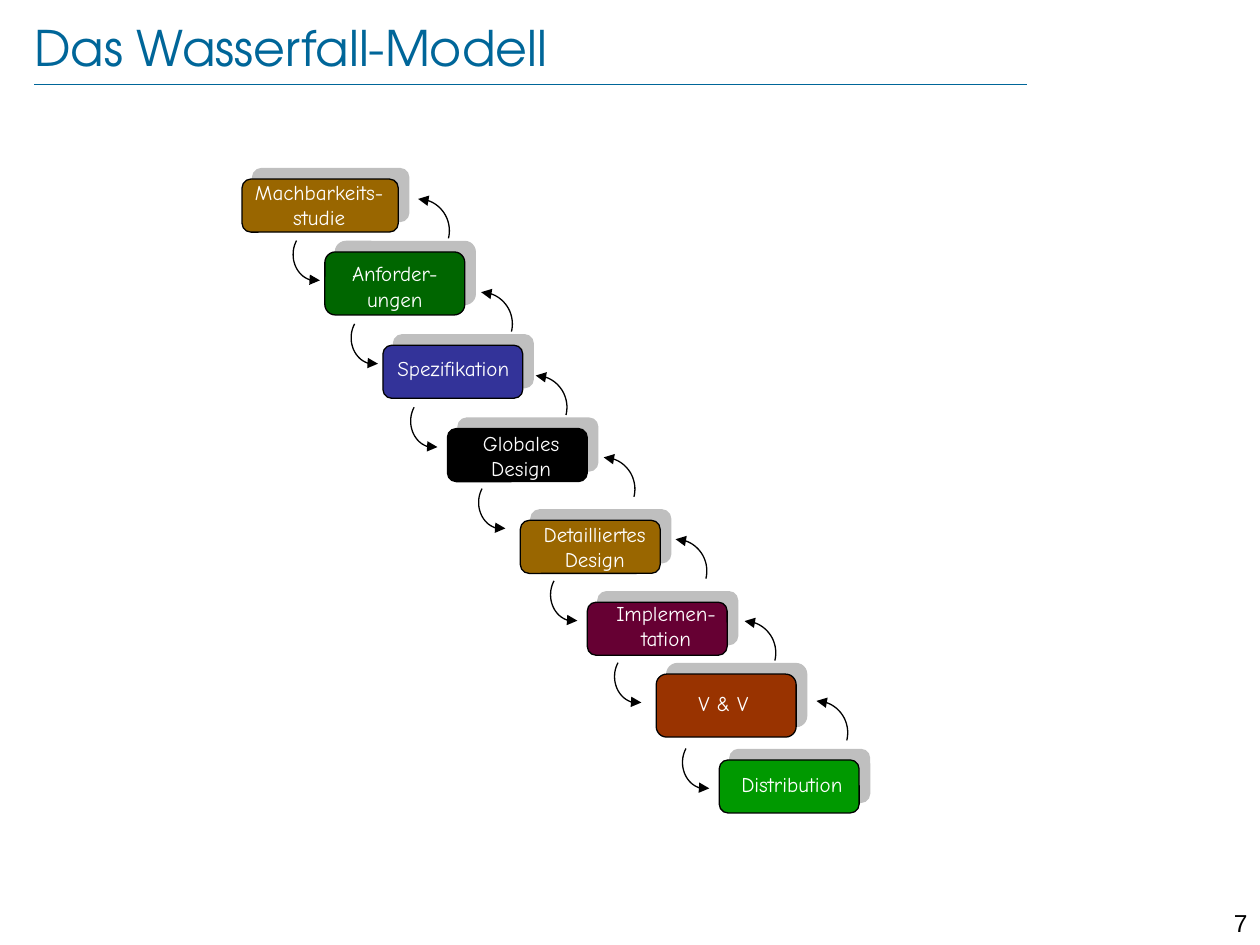
import math
import pptx
import pptx.dml.color
import pptx.enum.shapes
import pptx.enum.text
import pptx.oxml
import pptx.oxml.ns
import pptx.oxml.xmlchemy
import pptx.util

Cm = pptx.util.Cm
Pt = pptx.util.Pt
RGB = pptx.dml.color.RGBColor
ALIGN = pptx.enum.text.PP_ALIGN
ANCHOR = pptx.enum.text.MSO_ANCHOR
FIT = pptx.enum.text.MSO_AUTO_SIZE
SHAPE = pptx.enum.shapes.MSO_SHAPE
qn = pptx.oxml.ns.qn
make = pptx.oxml.xmlchemy.OxmlElement

TEAL = RGB(0x00, 0x66, 0x99)
BLACK = RGB(0x00, 0x00, 0x00)
WHITE = RGB(0xFF, 0xFF, 0xFF)
OCHRE = RGB(0x99, 0x66, 0x00)
GREEN = RGB(0x00, 0x66, 0x00)
BLUE = RGB(0x33, 0x33, 0x99)
PLUM = RGB(0x66, 0x00, 0x33)
RUST = RGB(0x99, 0x33, 0x00)
LIME = RGB(0x00, 0x99, 0x00)

HEAD = {"name": "TeX Gyre Adventor", "size": Pt(28), "color": TEAL}
LABEL = {"name": "Comic Neue", "size": Pt(12), "color": WHITE}
PAGE = {"name": "Arial", "size": Pt(14), "color": BLACK}
FLUSH = {"margin_left": 0, "margin_right": 0, "margin_top": 0,
         "margin_bottom": 0, "word_wrap": True, "auto_size": FIT.NONE}

SHADOW = ('<a:outerShdw xmlns:a="http://schemas.openxmlformats.org/drawingml/2006/main" '
          'dist="107950" dir="18900000" algn="ctr" rotWithShape="0">'
          '<a:srgbClr val="808080"><a:alpha val="50000"/></a:srgbClr></a:outerShdw>')

# Arcs in cm: centre from the top left corner, radii, start and end angle
DOWN = (0.46, 0.28, 0.46, 0.53, 212, 80, "a:tailEnd")
UP = (0, 0.64, 0.63, 0.64, -90, 14, "a:headEnd")

# Label, fill, box, label offset and width, offsets of the down and up arcs (cm)
STAGES = [
    ("Machbarkeits-studie", OCHRE, (4.88, 3.61, 3.15, 1.07), (0.08, 0, 2.95), None, None),
    ("Anforder-ungen", GREEN, (6.55, 5.08, 2.82, 1.27), (0.05, 0.18, 2.72),
     (-0.64, -0.23), (1.88, -1.07)),
    ("Spezifikation", BLUE, (7.72, 6.96, 2.82, 1.07), (0.1, 0.2, 2.64),
     (-0.64, -0.43), (1.98, -1.07)),
    ("Globales Design", BLACK, (9.02, 8.64, 2.82, 1.07), (0.23, 0.03, 2.51),
     (-0.74, -0.43), (1.78, -1.07)),
    ("Detailliertes Design", OCHRE, (10.49, 10.49, 2.82, 1.07), (0.18, 0.03, 2.64),
     (-0.84, -0.64), (1.68, -1.27)),
    ("Implemen-\vtation", PLUM, (11.84, 12.14, 2.82, 1.07), (0.03, -0.03, 3.12),
     (-0.74, -0.43), (1.78, -1.27)),
    ("V & V", RUST, (13.23, 13.59, 2.82, 1.27), (0.1, 0.33, 2.51),
     (-0.84, -0.23), (1.78, -1.07)),
    ("Distribution", LIME, (14.5, 15.32, 2.82, 1.07), (-0.2, 0.23, 3.33),
     (-0.74, -0.23), (1.96, -1.19)),
]


def apply(item, form):
    for key, value in form.items():
        if key == "color":
            item.color.rgb = value
        else:
            setattr(item, key, value)


def write(frame, text, font, align, form):
    apply(frame, form)
    frame.text = text
    para = frame.paragraphs[0]
    para.alignment = align
    for run in para.runs:
        apply(run.font, font)


def title(slide, box, text):
    """Title with a thin rule beneath it."""
    left, top, width, height = box
    head = slide.shapes.title
    apply(head, dict(zip(("left", "top", "width", "height"), map(Cm, box))))
    write(head.text_frame, text, HEAD, ALIGN.LEFT,
          {**FLUSH, "vertical_anchor": ANCHOR.MIDDLE})
    low = Cm(top + height + 0.15)
    rule = slide.shapes.add_connector(
        pptx.enum.shapes.MSO_CONNECTOR.STRAIGHT, Cm(left), low, Cm(left + 20.02), low)
    apply(rule.line, {"color": TEAL, "width": Pt(0.25)})
    rule._element.spPr.append(make("a:effectLst"))


def number(slide, box, text):
    """Page number in the lower right corner."""
    note = slide.shapes.add_textbox(*map(Cm, box))
    write(note.text_frame, text, PAGE, ALIGN.RIGHT, {"word_wrap": True})


def arc(slide, left, top, kind):
    """Open curved arrow whose box starts at left, top."""
    cx, cy, rx, ry, start, end, tip = kind
    steps = 24
    turns = [math.radians(start + (end - start) * i / steps) for i in range(steps + 1)]
    dots = [(Cm(left + cx + rx * math.cos(t)), Cm(top + cy + ry * math.sin(t)))
            for t in turns]
    pen = slide.shapes.build_freeform(*dots[0])
    pen.add_line_segments(dots[1:], close=False)
    curve = pen.convert_to_shape()
    curve.shadow.inherit = False
    curve.fill.background()
    apply(curve.line, {"color": BLACK, "width": Pt(0.75)})
    mark = make(tip)
    mark.set("type", "triangle")
    curve._element.spPr.find(qn("a:ln")).append(mark)


def stage(slide, box, text, fill, label, down, up):
    """One step: shadowed block, its label and the arrows to the step before."""
    left, top = box[:2]
    block = slide.shapes.add_shape(SHAPE.ROUNDED_RECTANGLE, *map(Cm, box))
    block.fill.solid()
    block.fill.fore_color.rgb = fill
    apply(block.line, {"color": BLACK, "width": Pt(0.75)})
    block.shadow.inherit = False
    block._element.spPr.find(qn("a:effectLst")).append(pptx.oxml.parse_xml(SHADOW))

    # Label
    dx, dy, width = label
    lines = 2 if "-" in text or "Design" in text else 1
    note = slide.shapes.add_textbox(
        Cm(left + dx), Cm(top + dy), Cm(width), Cm(0.51 * lines))
    write(note.text_frame, text, LABEL, ALIGN.CENTER, FLUSH)

    # Arrows
    for shift, kind in ((down, DOWN), (up, UP)):
        if shift:
            arc(slide, left + shift[0], top + shift[1], kind)


def main():
    deck = pptx.Presentation()
    deck.slide_width, deck.slide_height = Cm(25.4), Cm(19.05)
    slide = deck.slides.add_slide(deck.slide_layouts[5])
    title(slide, (0.69, 0.33, 22.76, 1.22), "Das Wasserfall-Modell")
    for text, fill, box, label, down, up in STAGES:
        stage(slide, box, text, fill, label, down, up)
    number(slide, (24, 18.19, 1.4, 0.61), "7")
    deck.save("out.pptx")


if __name__ == "__main__":
    main()
